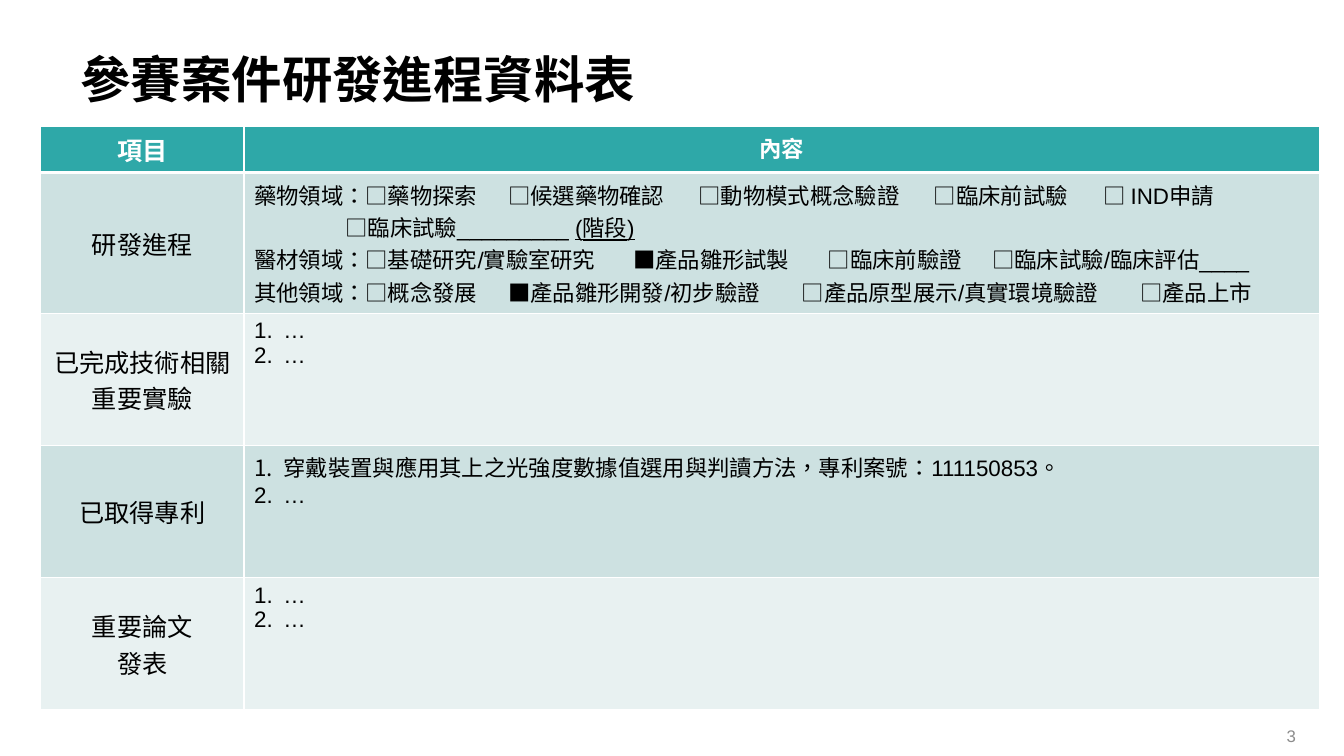
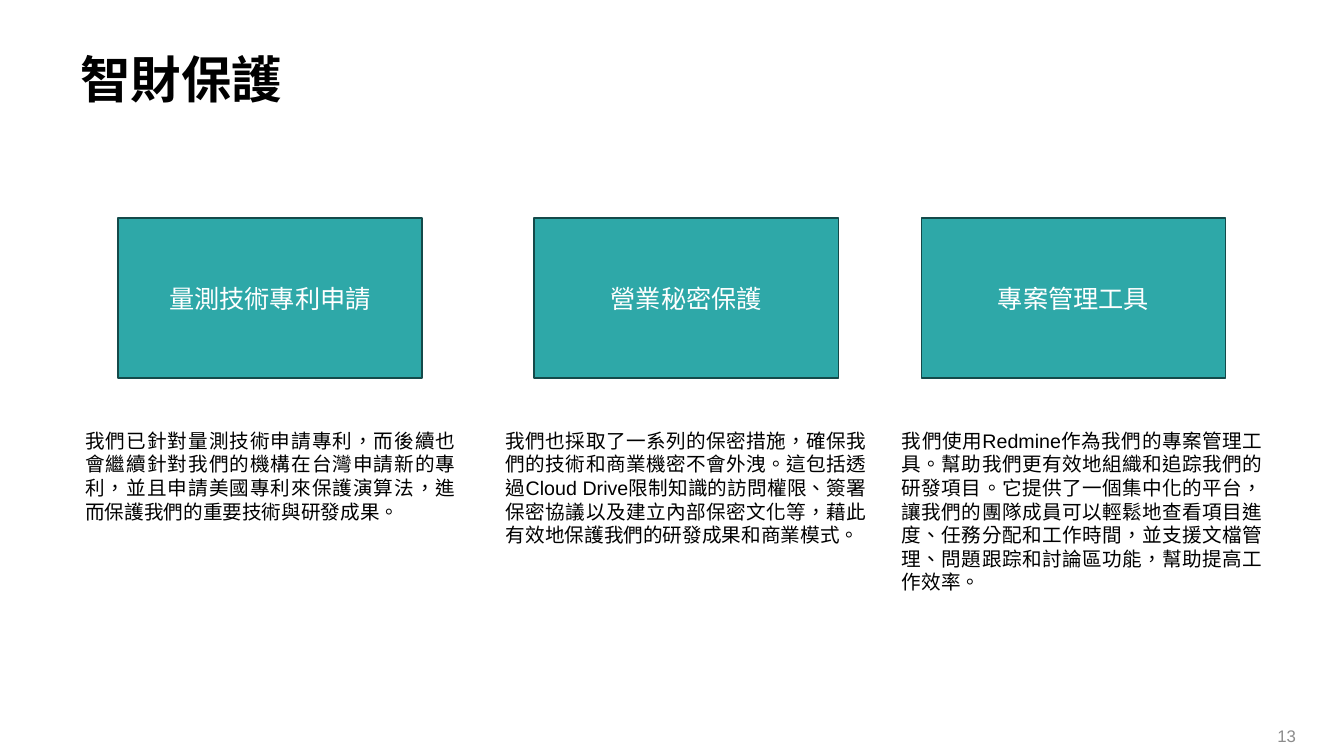
"""Build two slides: the development progress table and the intellectual property plan."""
from lxml import etree
from pptx import Presentation, util as u
from pptx.dml.color import RGBColor
from pptx.enum import lang, shapes, text
from pptx.oxml.ns import qn

Cm, Pt = u.Cm, u.Pt
TEAL = RGBColor(0x2E, 0xA8, 0xA8)
DARK_TEAL = RGBColor(0x14, 0x4A, 0x4A)
BAND_DARK = RGBColor(0xCD, 0xE1, 0xE1)
BAND_LIGHT = RGBColor(0xE8, 0xF1, 0xF1)
BLACK = RGBColor(0, 0, 0)
WHITE = RGBColor(0xFF, 0xFF, 0xFF)
GREY = RGBColor(0x8C, 0x8C, 0x8C)

LEFT, CENTER = text.PP_ALIGN.LEFT, text.PP_ALIGN.CENTER
RIGHT, JUSTIFY = text.PP_ALIGN.RIGHT, text.PP_ALIGN.JUSTIFY
TOP, MIDDLE = text.MSO_ANCHOR.TOP, text.MSO_ANCHOR.MIDDLE

PROGRESS = [
    ("藥物領域：□藥物探索\t□候選藥物確認\t□動物模式概念驗證\t□臨床前試驗\t□ IND申請", "",
     [6.4, 11.2, 17.13, 21.4]),
    ("\t□臨床試驗_________ ", "(階段)", [2.3]),
    ("醫材領域：□基礎研究/實驗室研究\t■產品雛形試製\t□臨床前驗證\t□臨床試驗/臨床評估____", "",
     [9.55, 14.46, 18.6]),
    ("其他領域：□概念發展\t■產品雛形開發/初步驗證\t□產品原型展示/真實環境驗證\t□產品上市", "",
     [6.4, 13.8, 22.33]),
]
NUMBERED_ROWS = [
    ("已完成技術相關\n重要實驗", "…\n…"),
    ("已取得專利", "穿戴裝置與應用其上之光強度數據值選用與判讀方法，專利案號：111150853。\n…"),
    ("重要論文\n發表", "…\n…"),
]
PROTECTIONS = [
    (2.97, 1.9, 9.83, "量測技術專利申請",
     "我們已針對量測技術申請專利，而後續也會繼續針對我們的機構在台灣申請新的專利，"
     "並且申請美國專利來保護演算法，進而保護我們的重要技術與研發成果。"),
    (13.46, 12.5, 9.58, "營業秘密保護",
     "我們也採取了一系列的保密措施，確保我們的技術和商業機密不會外洩。"
     "這包括透過Cloud Drive限制知識的訪問權限、簽署保密協議以及建立內部保密文化等，"
     "藉此有效地保護我們的研發成果和商業模式。"),
    (23.22, 22.48, 9.58, "專案管理工具",
     "我們使用Redmine作為我們的專案管理工具。幫助我們更有效地組織和追踪我們的研發項目。"
     "它提供了一個集中化的平台，讓我們的團隊成員可以輕鬆地查看項目進度、任務分配和工作時間，"
     "並支援文檔管理、問題跟踪和討論區功能，幫助提高工作效率。"),
]


class Deck:
    """Hold the presentation, its style and the current slide."""

    font = "Arial"
    language = lang.MSO_LANGUAGE_ID.TRADITIONAL_CHINESE

    def __init__(self):
        """Start an empty widescreen presentation."""
        self.prs = Presentation()
        self.prs.slide_width, self.prs.slide_height = Cm(33.87), Cm(19.05)
        self.s = None

    def slide(self, title, number):
        """Add a slide with its title and page number."""
        self.s = self.prs.slides.add_slide(self.prs.slide_layouts[6])
        self.text(29.46, 18.03, 3.45, 1.02, number, 12, GREY, RIGHT, MIDDLE)
        self.text(1.78, 1.02, 31.17, 1.93, title, 36, BLACK, LEFT, MIDDLE, bold=True)

    def style(self, tf, size, color, align, bold=False, spacing=None):
        """Format every paragraph and run of a text frame."""
        for p in tf.paragraphs:
            p.alignment = align
            if spacing:
                p.line_spacing = Pt(spacing)
            for r in p.runs:
                r.font.name, r.font.size, r.font.bold = self.font, Pt(size), bold
                r.font.language_id = self.language
                r.font.color.rgb = color

    def text(self, x, y, w, h, words, size, color, align, anchor=TOP, bold=False, spacing=None):
        """Add a wrapped text box."""
        tf = self.s.shapes.add_textbox(Cm(x), Cm(y), Cm(w), Cm(h)).text_frame
        tf.word_wrap, tf.vertical_anchor = True, anchor
        tf.text = words
        self.style(tf, size, color, align, bold, spacing)

    def box(self, x, y, w, h, words):
        """Add a filled rectangle with a centred label."""
        sp = self.s.shapes.add_shape(shapes.MSO_SHAPE.RECTANGLE, Cm(x), Cm(y), Cm(w), Cm(h))
        sp.shadow.inherit = False
        sp.fill.solid()
        sp.fill.fore_color.rgb = TEAL
        sp.line.color.rgb, sp.line.width = DARK_TEAL, Pt(1)
        tf = sp.text_frame
        tf.word_wrap, tf.vertical_anchor = True, MIDDLE
        tf.text = words
        self.style(tf, 18, WHITE, CENTER)

    def table(self, x, y, widths, heights):
        """Add an unstyled table and return it."""
        frame = self.s.shapes.add_table(len(heights), len(widths), Cm(x), Cm(y),
                                        Cm(sum(widths)), Cm(sum(heights)))
        tbl = frame.table
        tbl.first_row = tbl.horz_banding = False
        for column, width in zip(tbl.columns, widths):
            column.width = Cm(width)
        for row, height in zip(tbl.rows, heights):
            row.height = Cm(height)
        return tbl

    def cell(self, cell, words, size, fill, color=BLACK, align=CENTER, anchor=MIDDLE, bold=False,
             bottom=1):
        """Fill one table cell and give it white borders."""
        cell.text_frame.text = words
        cell.vertical_anchor = anchor
        tc_pr = cell._tc.get_or_add_tcPr()
        for side, width in zip("LRTB", (1, 1, 1, bottom)):
            ln = etree.SubElement(tc_pr, qn(f"a:ln{side}"), w=str(Pt(width)))
            solid = etree.SubElement(ln, qn("a:solidFill"))
            etree.SubElement(solid, qn("a:srgbClr"), val=str(WHITE))
        cell.fill.solid()
        cell.fill.fore_color.rgb = fill
        self.style(cell.text_frame, size, color, align, bold)

    def number(self, tf):
        """Number the paragraphs of a text frame."""
        indent = Cm(0.74)
        for p in tf.paragraphs:
            p_pr = p._p.get_or_add_pPr()
            p_pr.set("marL", str(indent))
            p_pr.set("indent", str(-indent))
            etree.SubElement(p_pr, qn("a:buFont"), typeface=self.font)
            etree.SubElement(p_pr, qn("a:buAutoNum"), type="arabicPeriod")

    def tabs(self, p, stops):
        """Set left tab stops, in centimetres, on a paragraph."""
        tab_list = etree.SubElement(p._p.get_or_add_pPr(), qn("a:tabLst"))
        for stop in stops:
            etree.SubElement(tab_list, qn("a:tab"), pos=str(Cm(stop)), algn="l")


def progress_slide(deck):
    """Build the development progress table."""
    deck.slide("參賽案件研發進程資料表", "3")
    tbl = deck.table(1.02, 3.18, [5.13, 27.1], [1.17, 3.55] + [3.33] * 3)
    for col, (words, size) in enumerate([("項目", 18), ("內容", 16)]):
        deck.cell(tbl.cell(0, col), words, size, TEAL, WHITE, anchor=TOP, bold=True, bottom=3)

    deck.cell(tbl.cell(1, 0), "研發進程", 18, BAND_DARK)
    stages = tbl.cell(1, 1)
    deck.cell(stages, "\n".join(line for line, _, _ in PROGRESS), 16, BAND_DARK, align=LEFT)
    for p, (_, underlined, stops) in zip(stages.text_frame.paragraphs, PROGRESS):
        deck.tabs(p, stops)
        if underlined:
            r = p.add_run()
            r.text = underlined
            r.font.underline = True
    deck.style(stages.text_frame, 16, BLACK, LEFT)

    for row, (label, items) in enumerate(NUMBERED_ROWS, start=2):
        fill = BAND_LIGHT if row % 2 == 0 else BAND_DARK
        deck.cell(tbl.cell(row, 0), label, 18, fill)
        deck.cell(tbl.cell(row, 1), items, 16, fill, align=LEFT, anchor=TOP)
        deck.number(tbl.cell(row, 1).text_frame)


def protection_slide(deck):
    """Build the three intellectual property measures."""
    deck.slide("智財保護", "13")
    for box_x, text_x, text_w, label, details in PROTECTIONS:
        deck.box(box_x, 5.49, 7.67, 4.04, label)
        deck.text(text_x, 10.67, text_w, 4.4, details, 14, BLACK, JUSTIFY, spacing=16.9)


def main():
    """Build and save the presentation."""
    deck = Deck()
    progress_slide(deck)
    protection_slide(deck)
    deck.prs.save("out.pptx")


if __name__ == "__main__":
    main()
